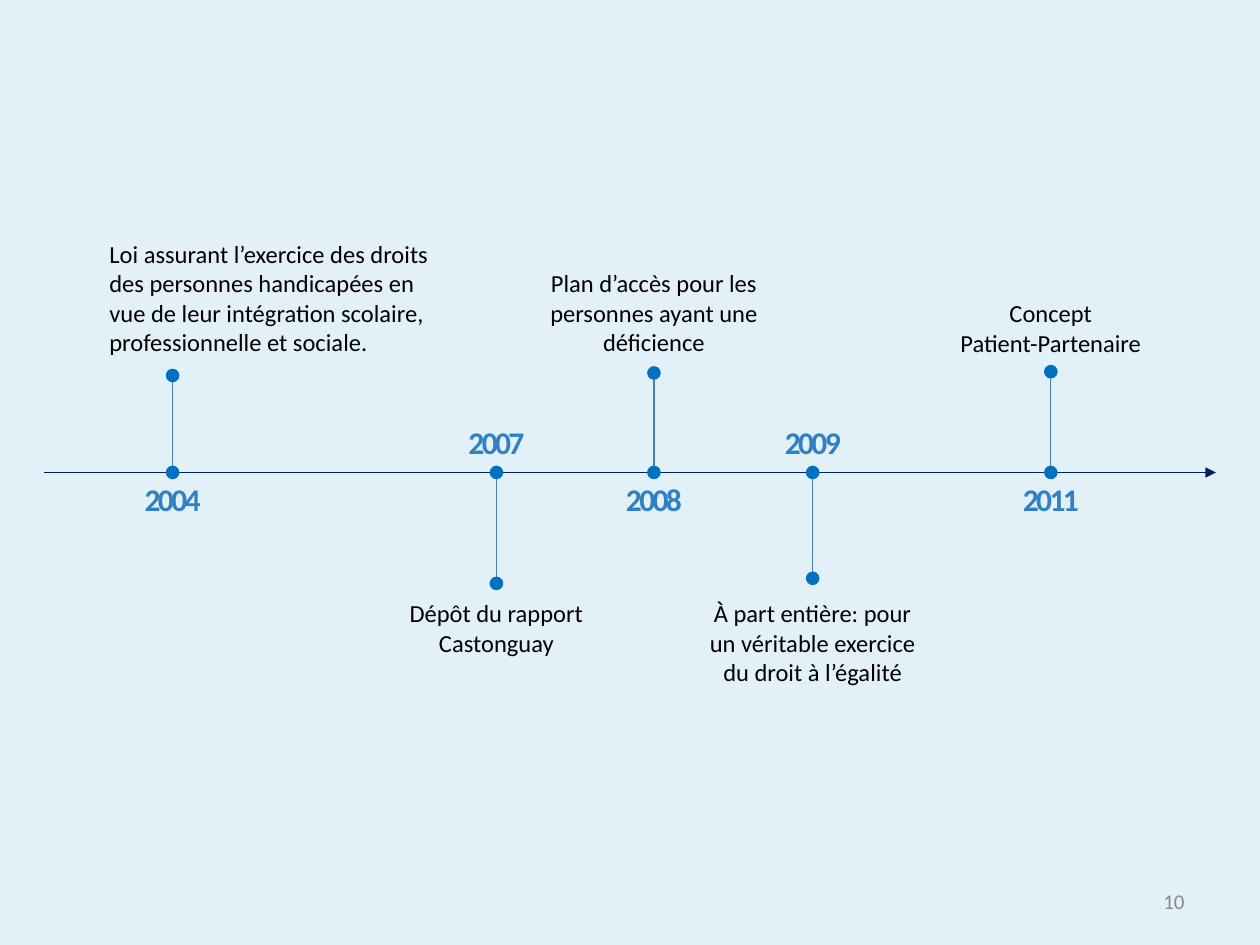
"""Timeline slide of five dated milestones on a 100 by 75 grid."""
import dataclasses
import typing

import lxml.etree
import pptx
import pptx.dml.color
import pptx.enum.shapes
import pptx.enum.text
import pptx.oxml.ns
import pptx.util

COLS, ROWS = 100, 75
CELL = pptx.util.Inches(0.1)
AXIS, DOT = 37.5, 0.8
YEAR_W, YEAR_H = 6.9, 4
ABOVE_BOTTOM, BELOW_TOP = 28.9, 47
LINE_H, PADDING = 2.36, 1
ALIGN = pptx.enum.text.PP_ALIGN
SHAPE = pptx.enum.shapes.MSO_SHAPE
BODY = {"name": "Calibri", "size": pptx.util.Pt(14)}
YEAR = {"name": "Calibri", "size": pptx.util.Pt(18), "bold": True}
NUMBER = {"name": "Calibri", "size": pptx.util.Pt(12)}


@dataclasses.dataclass
class Event:
    """A milestone: stem column, row of its outer dot, and label box."""
    year: str
    x: float
    tip: float
    text: str
    lines: int
    width: float
    shift: float = 0
    align: typing.Any = ALIGN.CENTER


EVENTS = [
    Event("2004", 13.7, 29.4, "Loi assurant l’exercice des droits des personnes handicapées en "
          "vue de leur intégration scolaire, professionnelle et sociale.", 4, 27.7, 7.85, ALIGN.LEFT),
    Event("2007", 39.4, 45.9, "Dépôt du rapport\nCastonguay", 2, 16.5),
    Event("2009", 64.5, 45.5, "À part entière: pour un véritable exercice du droit à l’égalité", 3, 19),
    Event("2008", 51.9, 29.2, "Plan d’accès pour les personnes ayant une déficience", 3, 22.1),
    Event("2011", 83.4, 29.1, "Concept\nPatient-Partenaire", 2, 23.6),
]


def grid(*cells: float) -> list[int]:
    """Convert grid cells to slide lengths."""
    return [round(c * CELL) for c in cells]


def paint(fmt: typing.Any, color: str) -> None:
    """Give a colour format a hex colour."""
    fmt.rgb = pptx.dml.color.RGBColor.from_string(color)


def add_text(shapes: typing.Any, box: tuple, text: str, font: dict, color: str,
             align: typing.Any, spacing: int = 0) -> typing.Any:
    """Add a wrapped text box, one paragraph per line of text."""
    tf = shapes.add_textbox(*grid(*box)).text_frame
    tf.word_wrap = True
    for i, line in enumerate(text.split("\n")):
        p = tf.add_paragraph() if i else tf.paragraphs[0]
        p.alignment = align
        r = p.add_run()
        r.text = line
        for name, value in font.items():
            setattr(r.font, name, value)
        paint(r.font.color, color)
        if spacing:
            r._r.get_or_add_rPr().set("spc", str(spacing))
    return tf


def add_shape(shapes: typing.Any, kind: typing.Any, box: tuple, color: str) -> typing.Any:
    """Add a plain filled shape without shadow."""
    sp = shapes.add_shape(kind, *grid(*box))
    sp.shadow.inherit = False
    sp.fill.solid()
    paint(sp.fill.fore_color, color)
    return sp


def add_line(shapes: typing.Any, ends: tuple, color: str) -> typing.Any:
    """Add a thin straight connector without shadow."""
    line = shapes.add_connector(pptx.enum.shapes.MSO_CONNECTOR.STRAIGHT, *grid(*ends))
    line.line.width = pptx.util.Pt(0.75)
    paint(line.line.color, color)
    lxml.etree.SubElement(line._element.spPr, pptx.oxml.ns.qn("a:effectLst"))
    return line


def add_dot(shapes: typing.Any, x: float, top: float) -> None:
    """Add a round marker centred on a column."""
    sp = add_shape(shapes, SHAPE.OVAL, (x - DOT / 2, top, DOT, DOT), "0070C0")
    sp.line.width = pptx.util.Pt(2)
    paint(sp.line.color, "0070C0")


def add_event(s: typing.Any, e: Event) -> None:
    """Draw a milestone as a group, with label and year on opposite sides of the axis."""
    shapes = s.shapes.add_group_shape().shapes
    above = e.tip < AXIS
    height = PADDING + LINE_H * e.lines
    top = ABOVE_BOTTOM - height if above else BELOW_TOP
    box = (e.x + e.shift - e.width / 2, top, e.width, height)
    tf = add_text(shapes, box, e.text, BODY, "000000", e.align)
    tf.auto_size = pptx.enum.text.MSO_AUTO_SIZE.SHAPE_TO_FIT_TEXT
    add_line(shapes, (e.x, e.tip, e.x, AXIS), "4B7EBC")
    for row in (e.tip, AXIS - DOT / 2):
        add_dot(shapes, e.x, row)
    year_top = AXIS + 0.1 if above else AXIS - YEAR_H - 0.4
    add_text(shapes, (e.x - YEAR_W / 2, year_top, YEAR_W, YEAR_H), e.year, YEAR,
             "3080C3", ALIGN.CENTER, -150)


def main() -> None:
    """Build and save the slide."""
    prs = pptx.Presentation()
    prs.slide_width, prs.slide_height = grid(COLS, ROWS)
    s = prs.slides.add_slide(prs.slide_layouts[6])
    tint = add_shape(s.shapes, SHAPE.RECTANGLE, (0, 0, COLS, ROWS), "C6E3F3")
    tint.line.fill.background()
    rgb = tint._element.spPr.find(".//" + pptx.oxml.ns.qn("a:srgbClr"))
    lxml.etree.SubElement(rgb, pptx.oxml.ns.qn("a:alpha"), val="50000")
    tf = add_text(s.shapes, (71.7, 69.5, 23.3, 4), "10", NUMBER, "898989", ALIGN.RIGHT)
    tf.vertical_anchor = pptx.enum.text.MSO_ANCHOR.MIDDLE
    axis = add_line(s.shapes, (3.5, AXIS, COLS - 3.5, AXIS), "002060")
    lxml.etree.SubElement(axis.line._get_or_add_ln(), pptx.oxml.ns.qn("a:tailEnd"), type="triangle")
    for e in EVENTS:
        add_event(s, e)
    prs.save("out.pptx")


if __name__ == "__main__":
    main()
